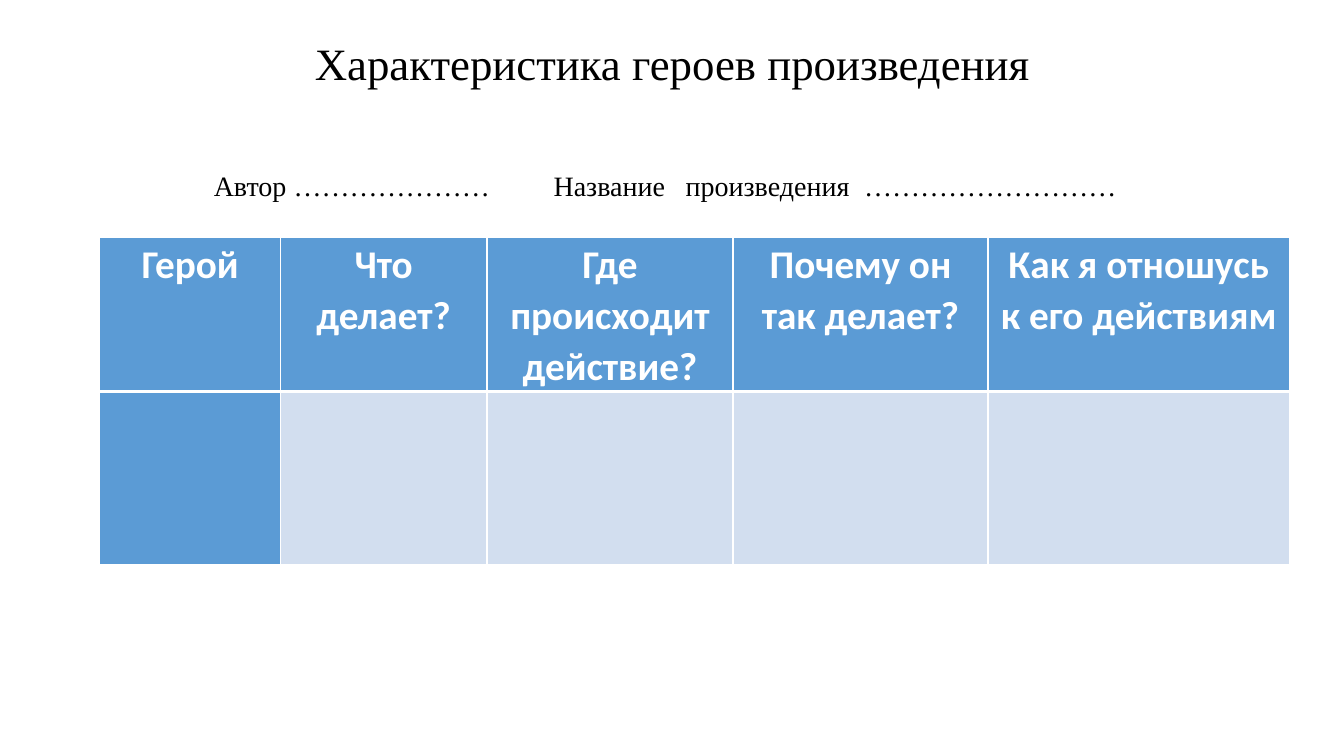
from pptx import Presentation
from pptx.util import Inches, Pt
from pptx.dml.color import RGBColor
from pptx.enum.text import PP_ALIGN as Align, MSO_ANCHOR as Anchor, MSO_AUTO_SIZE as Auto
from pptx.oxml.ns import qn
from lxml.etree import SubElement as Sub


def paint(fill, tone):
    fill.solid()
    fill.fore_color.rgb = RGBColor.from_string(tone)


def style(para, text, tone, form, font):
    run = para.add_run()
    run.text = text
    for key, val in form.items():
        setattr(para, key, val)
    for key, val in font.items():
        setattr(run.font, key, val)
    paint(run.font.fill, tone)


deck = Presentation()
deck.slide_width, deck.slide_height = Inches(13.33), Inches(7.5)
slide = deck.slides.add_slide(deck.slide_layouts[5])

title = slide.shapes.title
place = {"left": 0.92, "top": 0.4, "width": 11.5, "height": 1.45}
for key, val in place.items():
    setattr(title, key, Inches(val))
frame = title.text_frame
setup = {"word_wrap": True, "auto_size": Auto.NONE, "vertical_anchor": Anchor.TOP,
         "margin_left": Inches(1.2), "margin_right": Inches(1.2),
         "margin_top": Inches(0.01), "margin_bottom": 0}
for key, val in setup.items():
    setattr(frame, key, val)

style(frame.paragraphs[0], "Характеристика героев произведения", "000000",
      {"alignment": Align.CENTER, "line_spacing": 0.9},
      {"name": "Times New Roman", "size": Pt(32)})
line = frame.add_paragraph()
style(line, "Автор …………………\tНазвание\tпроизведения\t………………………", "000000",
      {"alignment": Align.LEFT, "line_spacing": 0.9, "space_before": Pt(59)},
      {"name": "Times New Roman", "size": Pt(20)})
tabs = Sub(line._p.get_or_add_pPr(), qn("a:tabLst"))
for stop in (3.37, 4.68, 6.45):
    Sub(tabs, qn("a:tab"), pos=str(Inches(stop)), algn="l")

heads = ["Герой", "Что делает?", "Где происходит действие?",
         "Почему он так делает?", "Как я отношусь к его действиям"]
wides = [1.79, 2.05, 2.44, 2.53, 2.99]
highs = [1.5, 1.72]
table = slide.shapes.add_table(2, 5, Inches(0.99), Inches(2.36),
                               Inches(sum(wides)), Inches(sum(highs))).table
for col, wide in zip(table.columns, wides):
    col.width = Inches(wide)
for row, high in zip(table.rows, highs):
    row.height = Inches(high)

edges = [{"lnL": 1, "lnR": 1, "lnT": 1, "lnB": 3},
         {"lnL": 1, "lnR": 1, "lnT": 3, "lnB": 1}]
for r, sides in enumerate(edges):
    for c, head in enumerate(heads):
        cell = table.cell(r, c)
        props = cell._tc.get_or_add_tcPr()
        for side, size in sides.items():
            edge = Sub(props, qn("a:" + side), w=str(Pt(size)))
            solid = Sub(edge, qn("a:solidFill"))
            Sub(solid, qn("a:srgbClr"), val="FFFFFF")
        paint(cell.fill, "D2DEEF" if r and c else "5B9BD5")
        if r == 0:
            cell.margin_left = cell.margin_right = Inches(0.07)
            cell.margin_top = cell.margin_bottom = 0
            style(cell.text_frame.paragraphs[0], head, "FFFFFF",
                  {"alignment": Align.CENTER, "line_spacing": 1.07},
                  {"name": "Calibri", "size": Pt(28), "bold": True})

deck.save("out.pptx")
